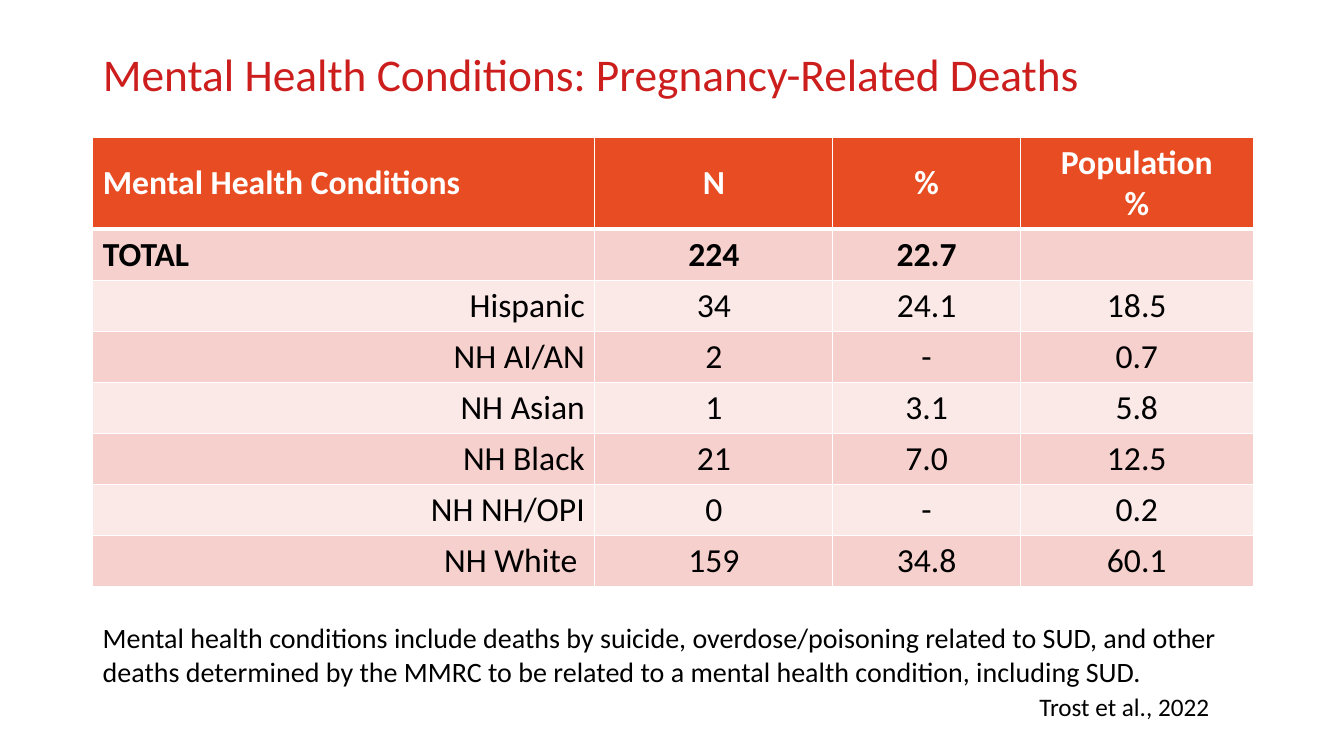
"""Build the slide on mental health conditions in pregnancy-related deaths."""
from dataclasses import dataclass

from lxml.etree import SubElement as Sub
from pptx import Presentation
from pptx.dml.color import RGBColor as RGB
from pptx.enum.text import MSO_ANCHOR as Anchor, PP_ALIGN as Align
from pptx.oxml.ns import qn
from pptx.slide import Slide
from pptx.table import _Cell as Cell
from pptx.text.text import TextFrame as Frame
from pptx.util import Inches, Pt


@dataclass(frozen=True)
class Theme:
    """Colours, font and type sizes."""
    font: str = "Calibri"
    red: str = "CC1E1D"
    head: str = "E84C22"
    dark: str = "F6D0CD"
    light: str = "FBE9E8"
    white: str = "FFFFFF"
    black: str = "000000"
    title: float = 32.4
    cell: float = 24
    note: float = 20
    cite: float = 18


@dataclass(frozen=True)
class Box:
    """A place on the slide, in inches."""
    left: float
    top: float
    width: float
    height: float


@dataclass(frozen=True)
class Note:
    """A text box below the table."""
    text: str
    box: Box
    size: float


LOOK = Theme()
TITLE = "Mental Health Conditions: Pregnancy-Related Deaths"
TITLE_BOX = Box(0.92, 0.37, 11.5, 0.78)
TABLE_BOX = Box(0.92, 1.36, 11.5, 4.4)
COLS = (4.98, 2.36, 1.86, 2.31)
HEAD_ROW, BODY_ROW = 0.85, 0.41
ROWS = (
    ("Mental Health Conditions", "N", "%", "Population\n%"),
    ("TOTAL", "224", "22.7", ""),
    ("Hispanic", "34", "24.1", "18.5"),
    ("NH AI/AN", "2", "-", "0.7"),
    ("NH Asian", "1", "3.1", "5.8"),
    ("NH Black", "21", "7.0", "12.5"),
    ("NH NH/OPI", "0", "-", "0.2"),
    ("NH White ", "159", "34.8", "60.1"),
)
NOTES = (
    Note("Mental health conditions include deaths by suicide, overdose/poisoning "
         "related to SUD, and other deaths determined by the MMRC to be related "
         "to a mental health condition, including SUD.",
         Box(0.92, 6.11, 11.5, 1.11), LOOK.note),
    Note("Trost et al., 2022", Box(10.21, 6.81, 2.47, 0.4), LOOK.cite),
)


def place(box: Box) -> tuple:
    """Turn a box into lengths."""
    return tuple(Inches(n) for n in (box.left, box.top, box.width, box.height))


def write(frame: Frame, text: str, size: float, color: str,
          bold: bool = False, align: Align = Align.LEFT) -> None:
    """Fill a frame with text and format its runs."""
    frame.text = text
    for para in frame.paragraphs:
        para.alignment = align
        for run in para.runs:
            font = run.font
            font.name, font.size, font.bold = LOOK.font, Pt(size), bold
            font.color.rgb = RGB.from_string(color)


def edge(cell: Cell, row: int) -> None:
    """Draw the white borders, thicker below the header."""
    props = cell._tc.get_or_add_tcPr()
    thick = {"lnB": row == 0, "lnT": row == 1}
    for side in ("lnL", "lnR", "lnT", "lnB"):
        line = Sub(props, qn(f"a:{side}"), w=str(Pt(3 if thick.get(side) else 1)))
        fill = Sub(line, qn("a:solidFill"))
        Sub(fill, qn("a:srgbClr"), val=LOOK.white)


def draw_cell(cell: Cell, text: str, row: int, col: int) -> None:
    """Style one cell by its row and column."""
    edge(cell, row)
    shade = LOOK.head if row == 0 else LOOK.dark if row % 2 else LOOK.light
    cell.fill.solid()
    cell.fill.fore_color.rgb = RGB.from_string(shade)
    cell.vertical_anchor = Anchor.MIDDLE
    align = Align.CENTER if col else Align.LEFT if row < 2 else Align.RIGHT
    color = LOOK.black if row else LOOK.white
    write(cell.text_frame, text, LOOK.cell, color, row < 2, align)


def draw_table(slide: Slide) -> None:
    """Add the table of deaths."""
    shape = slide.shapes.add_table(len(ROWS), len(COLS), *place(TABLE_BOX))
    table = shape.table
    for col, width in enumerate(COLS):
        table.columns[col].width = Inches(width)
    for row, texts in enumerate(ROWS):
        table.rows[row].height = Inches(BODY_ROW if row else HEAD_ROW)
        for col, text in enumerate(texts):
            draw_cell(table.cell(row, col), text, row, col)
    shape.height = Inches(TABLE_BOX.height)


def draw_title(slide: Slide) -> None:
    """Move and format the title."""
    title = slide.shapes.title
    title.left, title.top, title.width, title.height = place(TITLE_BOX)
    frame = title.text_frame
    frame.vertical_anchor = Anchor.MIDDLE
    frame.word_wrap = True
    write(frame, TITLE, LOOK.title, LOOK.red)
    frame.paragraphs[0].line_spacing = 0.9


def draw_note(slide: Slide, note: Note) -> None:
    """Add one text box."""
    frame = slide.shapes.add_textbox(*place(note.box)).text_frame
    frame.word_wrap = True
    write(frame, note.text, note.size, LOOK.black)


def main() -> None:
    """Build and save the deck."""
    deck = Presentation()
    deck.slide_width, deck.slide_height = Inches(13.33), Inches(7.5)
    slide = deck.slides.add_slide(deck.slide_layouts[5])
    draw_title(slide)
    draw_table(slide)
    for note in NOTES:
        draw_note(slide, note)
    deck.save("out.pptx")


if __name__ == "__main__":
    main()
